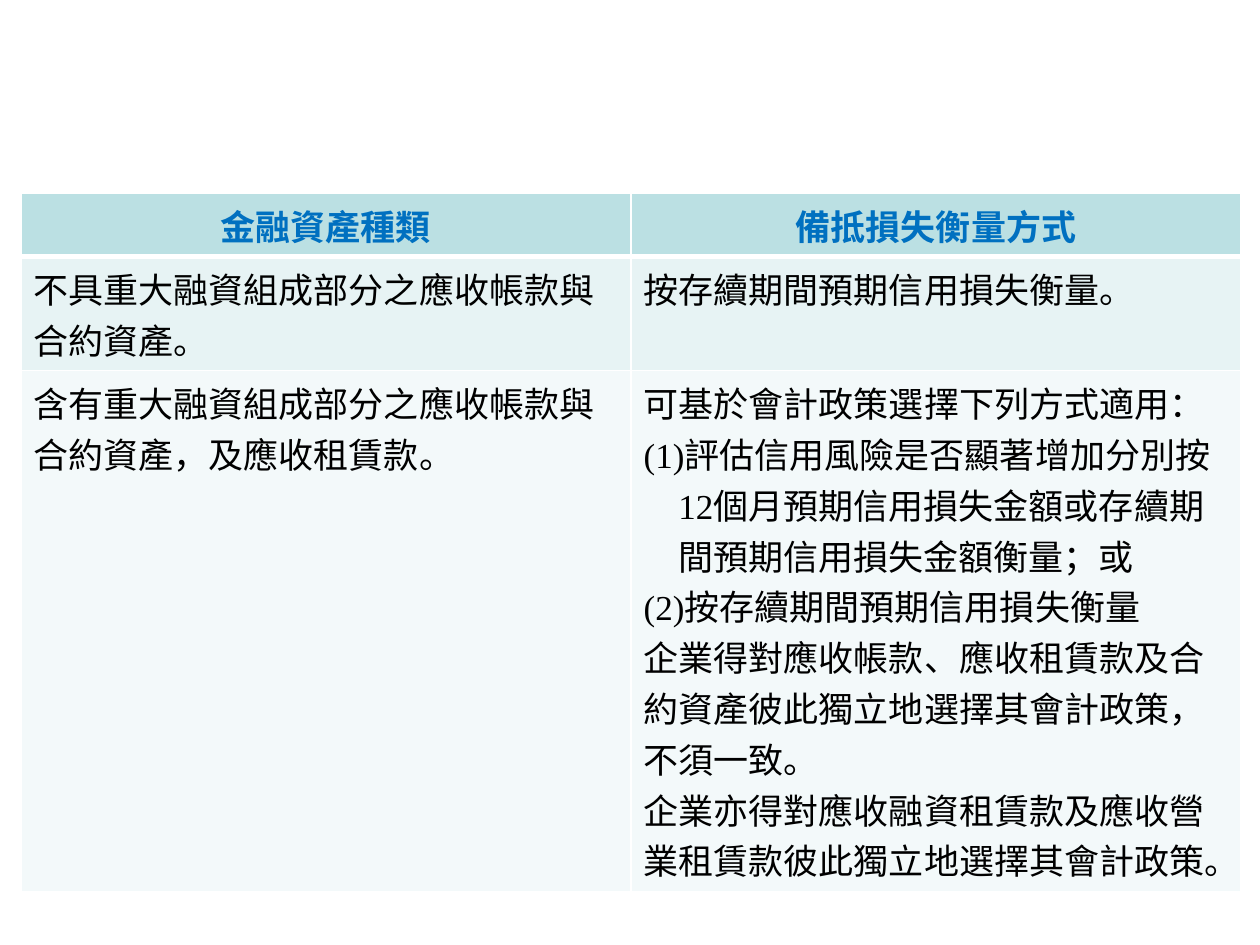
from pptx import Presentation
from pptx.dml.color import RGBColor
from pptx.enum.text import MSO_ANCHOR, PP_ALIGN
from pptx.oxml.ns import qn
from pptx.util import Cm, Pt
from lxml import etree

MIDDLE, TOP = MSO_ANCHOR.MIDDLE, MSO_ANCHOR.TOP
CENTER, LEFT = PP_ALIGN.CENTER, PP_ALIGN.LEFT

HEADER_BLUE = RGBColor(0x00, 0x70, 0xC0)
BLACK = RGBColor(0x00, 0x00, 0x00)
WHITE = RGBColor(0xFF, 0xFF, 0xFF)
ROW_FILLS = [
    RGBColor(0xBB, 0xE0, 0xE3),
    RGBColor(0xE7, 0xF3, 0xF4),
    RGBColor(0xF3, 0xF9, 0xFA),
]
ROW_HEIGHTS = [Cm(1.04), Cm(1.04), Cm(4.11)]
COLUMN_WIDTH = Cm(12.3)
ITEM_INDENT = Cm(0.7)

# Each cell is a list of paragraphs: (text, left indent)
ROWS = [
    [[("金融資產種類", 0)], [("備抵損失衡量方式", 0)]],
    [
        [("不具重大融資組成部分之應收帳款與合約資產。", 0)],
        [("按存續期間預期信用損失衡量。", 0)],
    ],
    [
        [("含有重大融資組成部分之應收帳款與合約資產，及應收租賃款。", 0)],
        [
            ("可基於會計政策選擇下列方式適用：", 0),
            ("(1)評估信用風險是否顯著增加分別按", 0),
            ("12個月預期信用損失金額或存續期", ITEM_INDENT),
            ("間預期信用損失金額衡量；或", ITEM_INDENT),
            ("(2)按存續期間預期信用損失衡量", 0),
            ("企業得對應收帳款、應收租賃款及合約資產彼此獨立地選擇其會計政策，不須一致。", 0),
            ("企業亦得對應收融資租賃款及應收營業租賃款彼此獨立地選擇其會計政策。", 0),
        ],
    ],
]


def set_borders(cell, widths):
    """Draw white borders; they must come before the fill in the cell."""
    properties = cell._tc.get_or_add_tcPr()
    for side, width in widths.items():
        line = etree.SubElement(properties, qn(f"a:{side}"), w=str(Pt(width)))
        fill = etree.SubElement(line, qn("a:solidFill"))
        etree.SubElement(fill, qn("a:srgbClr"), val=str(WHITE))


deck = Presentation()
deck.slide_width, deck.slide_height = Cm(25.4), Cm(19.05)
slide = deck.slides.add_slide(deck.slide_layouts[6])

# Table of loss allowance methods
frame = slide.shapes.add_table(
    len(ROWS), 2, Cm(0.42), Cm(3.89), 2 * COLUMN_WIDTH, sum(ROW_HEIGHTS)
)
table = frame.table
for column in table.columns:
    column.width = COLUMN_WIDTH

for row_index, row in enumerate(ROWS):
    table.rows[row_index].height = ROW_HEIGHTS[row_index]
    is_header = row_index == 0
    top_width = 3 if row_index == 1 else 1
    bottom_width = 3 if is_header else 1
    for column_index, paragraphs in enumerate(row):
        cell = table.cell(row_index, column_index)
        set_borders(cell, {"lnL": 1, "lnR": 1, "lnT": top_width, "lnB": bottom_width})
        cell.fill.solid()
        cell.fill.fore_color.rgb = ROW_FILLS[row_index]
        cell.vertical_anchor = MIDDLE if is_header else TOP

        # Cell text
        for index, (text, indent) in enumerate(paragraphs):
            text_frame = cell.text_frame
            para = text_frame.add_paragraph() if index else text_frame.paragraphs[0]
            para.alignment = CENTER if is_header else LEFT
            if indent:
                para._p.get_or_add_pPr().set("marL", str(indent))
            span = para.add_run()
            span.text = text
            span.font.name = "Times New Roman"
            span.font.size = Pt(20)
            span.font.bold = is_header
            span.font.color.rgb = HEADER_BLUE if is_header else BLACK

deck.save("out.pptx")
